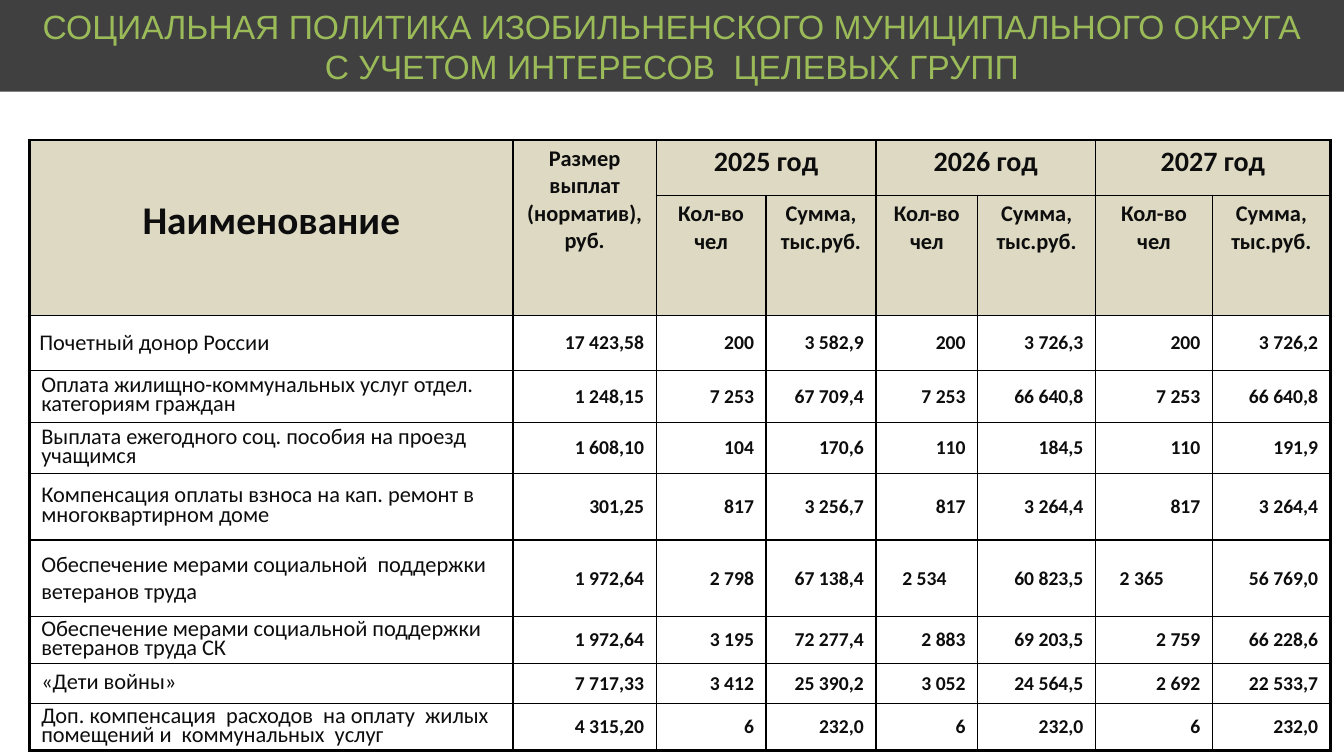
import pptx
import pptx.dml.color
import pptx.enum.shapes
import pptx.enum.text
import pptx.oxml.ns
import pptx.util
from lxml import etree

Pt = pptx.util.Pt
RGBColor = pptx.dml.color.RGBColor
Align = pptx.enum.text.PP_ALIGN
Anchor = pptx.enum.text.MSO_ANCHOR

CHARCOAL = RGBColor(0x40, 0x40, 0x40)
GREEN = RGBColor(0x9B, 0xBB, 0x59)
BEIGE = RGBColor(0xDD, 0xD9, 0xC3)
INK = RGBColor(0x0D, 0x0D, 0x0D)
BLACK = RGBColor(0x00, 0x00, 0x00)
WHITE = RGBColor(0xFF, 0xFF, 0xFF)

TITLE = (
    "СОЦИАЛЬНАЯ ПОЛИТИКА ИЗОБИЛЬНЕНСКОГО МУНИЦИПАЛЬНОГО ОКРУГА\n"
    "С УЧЕТОМ ИНТЕРЕСОВ  ЦЕЛЕВЫХ ГРУПП"
)
YEARS = ("2025 год", "2026 год", "2027 год")
YEAR_COLUMNS = ("Кол-во чел", "Сумма, тыс.руб.")
PAYMENTS = [
    ("Почетный донор России", "17 423,58",
     "200", "3 582,9", "200", "3 726,3", "200", "3 726,2"),
    ("Оплата жилищно-коммунальных услуг отдел. категориям граждан", "1 248,15",
     "7 253", "67 709,4", "7 253", "66 640,8", "7 253", "66 640,8"),
    ("Выплата ежегодного соц. пособия на проезд учащимся", "1 608,10",
     "104", "170,6", "110", "184,5", "110", "191,9"),
    ("Компенсация оплаты взноса на кап. ремонт в многоквартирном доме", "301,25",
     "817", "3 256,7", "817", "3 264,4", "817", "3 264,4"),
    ("Обеспечение мерами социальной  поддержки ветеранов труда", "1 972,64",
     "2 798", "67 138,4", "2 534", "60 823,5", "2 365", "56 769,0"),
    ("Обеспечение мерами социальной поддержки ветеранов труда СК", "1 972,64",
     "3 195", "72 277,4", "2 883", "69 203,5", "2 759", "66 228,6"),
    ("«Дети войны»", "7 717,33",
     "3 412", "25 390,2", "3 052", "24 564,5", "2 692", "22 533,7"),
    ("Доп. компенсация  расходов  на оплату  жилых помещений и  коммунальных  услуг",
     "4 315,20", "6", "232,0", "6", "232,0", "6", "232,0"),
]
COLUMN_WIDTHS = (345.6, 102.2, 78.5, 78.5, 72.7, 84.2, 83.5, 84.2)
ROW_HEIGHTS = (39.6, 85.7, 39.6, 36.7, 36.7, 47.5, 54.7, 33.8, 28.1, 33.8)
HEADER_ROWS = 2
SINGLE_SPACED_ROWS = (2, 6)
INDENTED_COUNTS = {(6, 4): 22.2, (6, 6): 34.6}
CELL_MARGIN = 8.6
THIN, THICK = 1, 2.25


class SlideBuilder:
    heading_font = "Arial"
    table_font = "Calibri"

    def __init__(self, presentation):
        self.slide = presentation.slides.add_slide(presentation.slide_layouts[6])

    def style_paragraph(self, paragraph, name, size, color, bold, align):
        paragraph.alignment = align
        font = paragraph.font
        font.name, font.size, font.bold = name, Pt(size), bold
        font.color.rgb = color

    def banner(self, text, left, top, width, height):
        shape = self.slide.shapes.add_shape(
            pptx.enum.shapes.MSO_SHAPE.RECTANGLE,
            Pt(left), Pt(top), Pt(width), Pt(height))
        shape.shadow.inherit = False
        shape.fill.solid()
        shape.fill.fore_color.rgb = CHARCOAL
        shape.line.fill.background()
        frame = shape.text_frame
        frame.text = text
        frame.word_wrap = True
        frame.auto_size = pptx.enum.text.MSO_AUTO_SIZE.SHAPE_TO_FIT_TEXT
        for paragraph in frame.paragraphs:
            self.style_paragraph(paragraph, self.heading_font, 24, GREEN, False, Align.CENTER)

    def table(self, left, top, column_widths, row_heights):
        table = self.slide.shapes.add_table(
            len(row_heights), len(column_widths), Pt(left), Pt(top),
            Pt(sum(column_widths)), Pt(sum(row_heights))).table
        table.first_row = table.horz_banding = False
        for column, width in zip(table.columns, column_widths):
            column.width = Pt(width)
        for row, height in zip(table.rows, row_heights):
            row.height = Pt(height)
        return table

    def cell_text(self, cell, text, size, bold=True, align=Align.CENTER,
                  anchor=Anchor.TOP, spacing=None, margins=None):
        cell.text = text
        cell.vertical_anchor = anchor
        if margins:
            (cell.margin_left, cell.margin_top,
             cell.margin_right, cell.margin_bottom) = map(Pt, margins)
        paragraph = cell.text_frame.paragraphs[0]
        self.style_paragraph(paragraph, self.table_font, size, INK, bold, align)
        if spacing:
            paragraph.line_spacing = spacing

    def cell_frame(self, cell, fill, widths):
        properties = cell._tc.get_or_add_tcPr()
        for side, width in zip("LRTB", widths):
            line = etree.SubElement(
                properties, pptx.oxml.ns.qn("a:ln" + side), w=str(Pt(width)))
            solid = etree.SubElement(line, pptx.oxml.ns.qn("a:solidFill"))
            etree.SubElement(solid, pptx.oxml.ns.qn("a:srgbClr"), val=str(BLACK))
        if fill is None:
            cell.fill.background()
        else:
            cell.fill.solid()
            cell.fill.fore_color.rgb = fill


def fill_header(builder, table):
    for column in (0, 1):
        table.cell(0, column).merge(table.cell(1, column))
    builder.cell_text(table.cell(0, 0), "Наименование", 28, margins=(7.2, 41, 7.2, 3.6))
    builder.cell_text(table.cell(0, 1), "Размер выплат (норматив),руб.", 16)
    for index, year in enumerate(YEARS):
        first = 2 + 2 * index
        table.cell(0, first).merge(table.cell(0, first + 1))
        builder.cell_text(table.cell(0, first), year, 20)
        for offset, label in enumerate(YEAR_COLUMNS):
            builder.cell_text(table.cell(1, first + offset), label, 16)


def fill_payments(builder, table):
    for row, (name, *values) in enumerate(PAYMENTS, HEADER_ROWS):
        left = 7.2 if row == HEADER_ROWS else CELL_MARGIN
        builder.cell_text(
            table.cell(row, 0), name, 16, False, Align.LEFT, Anchor.MIDDLE,
            None if row in SINGLE_SPACED_ROWS else 0.7, (left, 0, 0, 0))
        for column, value in enumerate(values, 1):
            right = INDENTED_COUNTS.get((row, column), CELL_MARGIN)
            builder.cell_text(table.cell(row, column), value, 14, True, Align.RIGHT,
                              Anchor.MIDDLE, margins=(0, 0, right, 0))


def frame_cells(builder, table):
    last_row, last_column = len(ROW_HEIGHTS) - 1, len(COLUMN_WIDTHS) - 1
    for row in range(last_row + 1):
        for column in range(last_column + 1):
            cell = table.cell(row, column)
            end_column = column + cell.span_width - 1 if cell.is_merge_origin else column
            outer = (column == 0, end_column == last_column, row == 0, row == last_row)
            if row < HEADER_ROWS:
                fill = BEIGE
            else:
                fill = WHITE if column in (3, 5, 7) else None
            builder.cell_frame(cell, fill, [THICK if edge else THIN for edge in outer])


def main():
    presentation = pptx.Presentation()
    presentation.slide_width, presentation.slide_height = Pt(960), Pt(540)
    builder = SlideBuilder(presentation)
    table = builder.table(20.9, 100, COLUMN_WIDTHS, ROW_HEIGHTS)
    fill_header(builder, table)
    fill_payments(builder, table)
    frame_cells(builder, table)
    builder.banner(TITLE, 0, 0, 960, 65.5)
    presentation.save("out.pptx")


if __name__ == "__main__":
    main()
